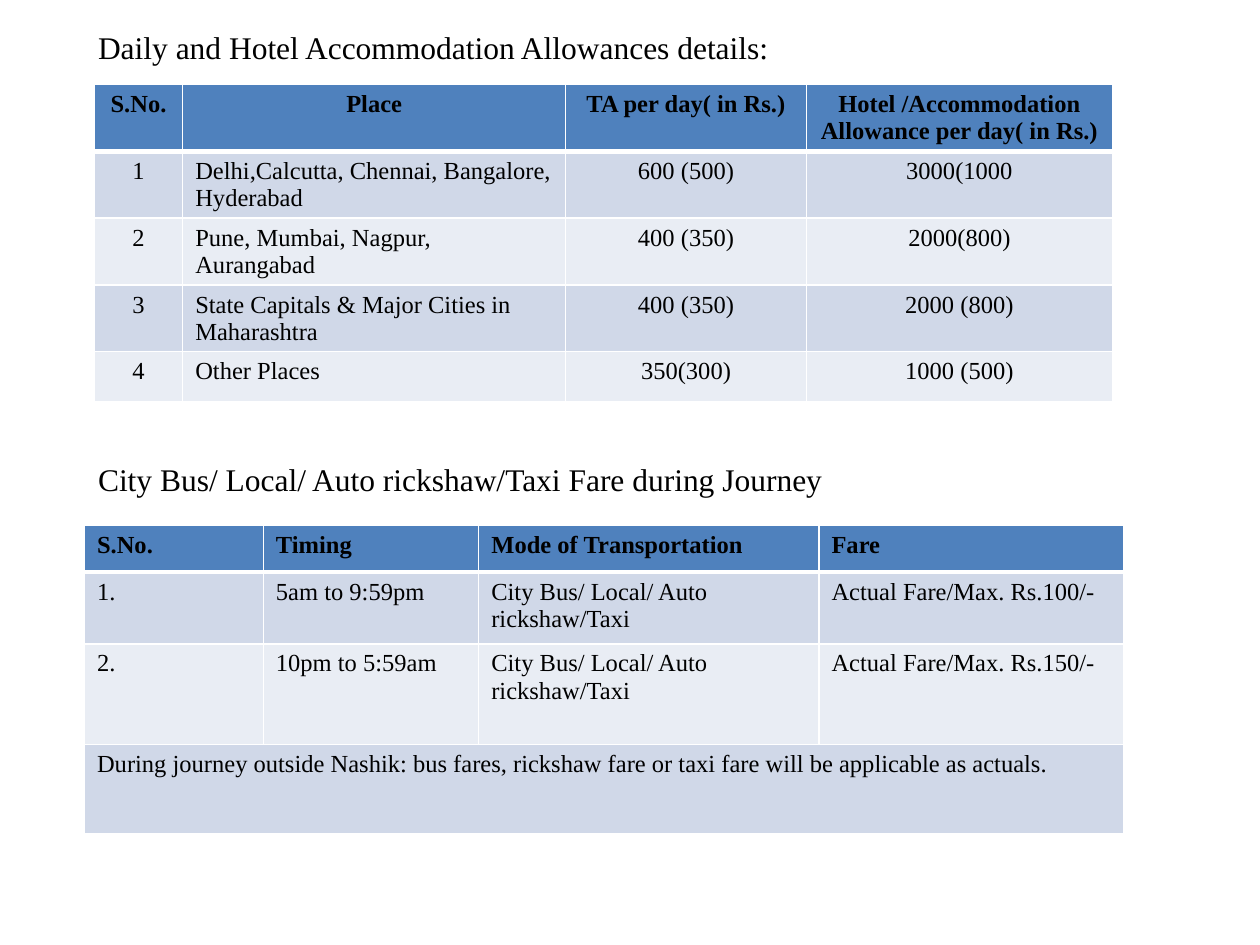
from pptx import Presentation
from pptx.dml.color import RGBColor as RGB
from pptx.enum.text import PP_ALIGN as Align
from pptx.oxml.ns import qn
from pptx.util import Inches, Pt
from lxml.etree import SubElement

COLORS = {"text": "000000", "header": "4F81BD", "odd": "D0D8E8",
          "even": "E9EDF4", "line": "FFFFFF"}
COLS, ROWS = 100, 75  # slide grid


class Deck:
    font, title_size, cell_size = "Times New Roman", 18, 14

    def __init__(self, width, height):
        self.prs = Presentation()
        self.prs.slide_width, self.prs.slide_height = Inches(width), Inches(height)
        self.slide = self.prs.slides.add_slide(self.prs.slide_layouts[6])

    def x(self, cols):
        return round(self.prs.slide_width * cols / COLS)

    def y(self, rows):
        return round(self.prs.slide_height * rows / ROWS)

    def style(self, p, size, bold=False, align=Align.LEFT):
        p.alignment = align
        p.font.name, p.font.size, p.font.bold = self.font, Pt(size), bold
        p.font.color.rgb = RGB.from_string(COLORS["text"])

    def heading(self, text, left, top, width, height):
        box = self.slide.shapes.add_textbox(
            self.x(left), self.y(top), self.x(width), self.y(height))
        tf = box.text_frame
        tf.word_wrap = True
        tf.text = text
        self.style(tf.paragraphs[0], self.title_size)

    def borders(self, cell, top, bottom):
        props = cell._tc.get_or_add_tcPr()
        for side, width in (("L", 1), ("R", 1), ("T", top), ("B", bottom)):
            ln = SubElement(props, qn("a:ln" + side), w=str(Pt(width)))
            fill = SubElement(ln, qn("a:solidFill"))
            SubElement(fill, qn("a:srgbClr"), val=COLORS["line"])

    def table(self, left, top, widths, heights, data, aligns):
        table = self.slide.shapes.add_table(
            len(heights), len(widths), self.x(left), self.y(top),
            self.x(sum(widths)), self.y(sum(heights))).table
        for col, width in zip(table.columns, widths):
            col.width = self.x(width)
        for row, height in zip(table.rows, heights):
            row.height = self.y(height)
        for i, values in enumerate(data):
            shade = "header" if i == 0 else "odd" if i % 2 else "even"
            for j, align in enumerate(aligns):
                cell = table.cell(i, j)
                self.borders(cell, 3 if i == 1 else 1, 3 if i == 0 else 1)
                cell.fill.solid()
                cell.fill.fore_color.rgb = RGB.from_string(COLORS[shade])
                if j < len(values):
                    cell.text = values[j]
                    if i == 0 and Align.CENTER in aligns:
                        align = Align.CENTER
                    self.style(cell.text_frame.paragraphs[0],
                               self.cell_size, i == 0, align)
            # A single value spans the whole row
            if len(values) == 1:
                table.cell(i, 0).merge(table.cell(i, len(widths) - 1))


def main():
    deck = Deck(10, 7.5)

    # Daily and hotel allowances
    deck.table(7.5, 6.7, [7, 30.4, 19.1, 24.3], [5.2, 5.3, 5.3, 5.3, 4], [
        ["S.No.", "Place", "TA per day( in Rs.)",
         "Hotel /Accommodation Allowance per day( in Rs.)"],
        ["1", "Delhi,Calcutta, Chennai, Bangalore, Hyderabad",
         "600 (500)", "3000(1000"],
        ["2", "Pune, Mumbai, Nagpur, Aurangabad", "400 (350)", "2000(800)"],
        ["3", "State Capitals & Major Cities in Maharashtra",
         "400 (350)", "2000 (800)"],
        ["4", "Other Places", "350(300)", "1000 (500)"],
    ], [Align.CENTER, Align.LEFT, Align.CENTER, Align.CENTER])
    deck.heading("Daily and Hotel Accommodation Allowances details:",
                 6.8, 1.7, 80, 4)

    # Local travel fares
    mode = "City Bus/ Local/ Auto rickshaw/Taxi"
    deck.table(6.7, 41.7, [14.2, 17.1, 27, 24.2], [3.7, 5.7, 8, 7.1], [
        ["S.No.", "Timing", "Mode of Transportation", "Fare"],
        ["1.", "5am to 9:59pm", mode, "Actual Fare/Max. Rs.100/-"],
        ["2.", "10pm to 5:59am", mode, "Actual Fare/Max. Rs.150/-"],
        ["During journey outside Nashik: bus fares, rickshaw fare or taxi "
         "fare will be applicable as actuals."],
    ], [Align.LEFT] * 4)
    deck.heading("City Bus/ Local/ Auto rickshaw/Taxi Fare during Journey",
                 6.8, 36, 80, 4)

    deck.prs.save("out.pptx")


if __name__ == "__main__":
    main()
